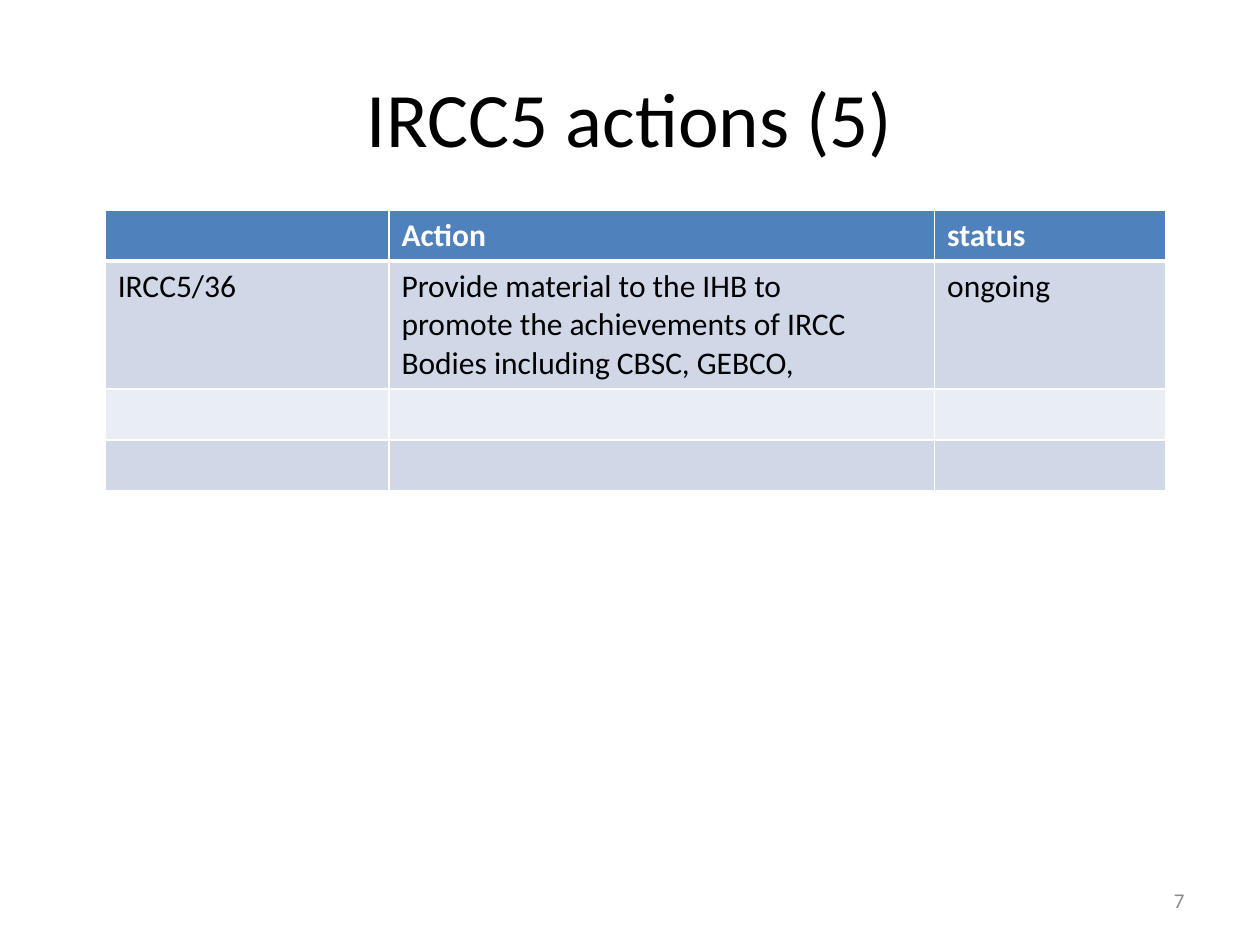
from pptx import Presentation
from pptx.dml.color import RGBColor
from pptx.enum.text import MSO_ANCHOR as Anchor, PP_ALIGN as Align
from pptx.oxml.ns import qn
from pptx.util import Cm, Pt
from lxml.etree import SubElement

HEADER, BAND_DARK, BAND_LIGHT = "4F81BD", "D0D8E8", "E9EDF4"
BLACK, WHITE, GREY = "000000", "FFFFFF", "8C8C8C"

ACTIONS = [
    ["", "Action", "status"],
    ["IRCC5/36",
     "Provide material to the IHB to\n"
     "promote the achievements of IRCC\n"
     "Bodies including CBSC, GEBCO,",
     "ongoing"],
    ["", "", ""],
    ["", "", ""],
]


def rgb(value):
    return RGBColor.from_string(value)


class SlideBuilder:
    """Holds the text style and the slide being filled."""

    def __init__(self, slide, font="Calibri"):
        self.slide = slide
        self.font = font

    def add_text(self, tf, text, size, color=BLACK, bold=False, align=Align.LEFT):
        """Put each line of text in a paragraph of its own."""
        for i, line in enumerate(text.split("\n")):
            p = tf.add_paragraph() if i else tf.paragraphs[0]
            p.alignment = align
            p.font.size = Pt(size)
            if line:
                r = p.add_run()
                r.text = line
                r.font.name = self.font
                r.font.size = Pt(size)
                r.font.bold = bold
                r.font.color.rgb = rgb(color)

    def title(self, text, left, top, width, height):
        sp = self.slide.shapes.title
        sp.left, sp.top, sp.width, sp.height = map(Cm, (left, top, width, height))
        sp.text_frame.vertical_anchor = Anchor.MIDDLE
        self.add_text(sp.text_frame, text, 44, align=Align.CENTER)

    def text_box(self, text, left, top, width, height, size, color, align):
        tf = self.slide.shapes.add_textbox(*map(Cm, (left, top, width, height))).text_frame
        tf.word_wrap = True
        tf.vertical_anchor = Anchor.MIDDLE
        self.add_text(tf, text, size, color, align=align)

    def borders(self, cell, bottom=1, top=1):
        tc_pr = cell._tc.get_or_add_tcPr()
        for side, width in (("L", 1), ("R", 1), ("T", top), ("B", bottom)):
            ln = SubElement(tc_pr, qn(f"a:ln{side}"), w=str(Pt(width)))
            fill = SubElement(ln, qn("a:solidFill"))
            SubElement(fill, qn("a:srgbClr"), val=WHITE)

    def table(self, rows, left, top, col_widths, row_height):
        """Add a table with a header row and banded body rows."""
        table = self.slide.shapes.add_table(
            len(rows), len(col_widths), Cm(left), Cm(top),
            Cm(sum(col_widths)), Cm(row_height * len(rows))).table
        for column, width in zip(table.columns, col_widths):
            column.width = Cm(width)
        for i, texts in enumerate(rows):
            table.rows[i].height = Cm(row_height)
            header = i == 0
            band = HEADER if header else BAND_DARK if i % 2 else BAND_LIGHT
            for j, text in enumerate(texts):
                cell = table.cell(i, j)
                self.borders(cell, bottom=3 if header else 1, top=3 if i == 1 else 1)
                cell.fill.solid()
                cell.fill.fore_color.rgb = rgb(band)
                self.add_text(cell.text_frame, text, 18, WHITE if header else BLACK, header)


def main():
    prs = Presentation()
    prs.slide_width, prs.slide_height = Cm(25.4), Cm(19.05)
    title_only = prs.slide_layouts[5]
    s = SlideBuilder(prs.slides.add_slide(title_only))
    s.title("IRCC5 actions (5)", 1.27, 0.76, 22.86, 3.18)
    s.table(ACTIONS, 2.12, 4.23, [5.72, 11, 4.66], 1.03)
    s.text_box("7", 18.2, 17.65, 5.93, 1.01, 12, GREY, Align.RIGHT)
    prs.save("out.pptx")


if __name__ == "__main__":
    main()
